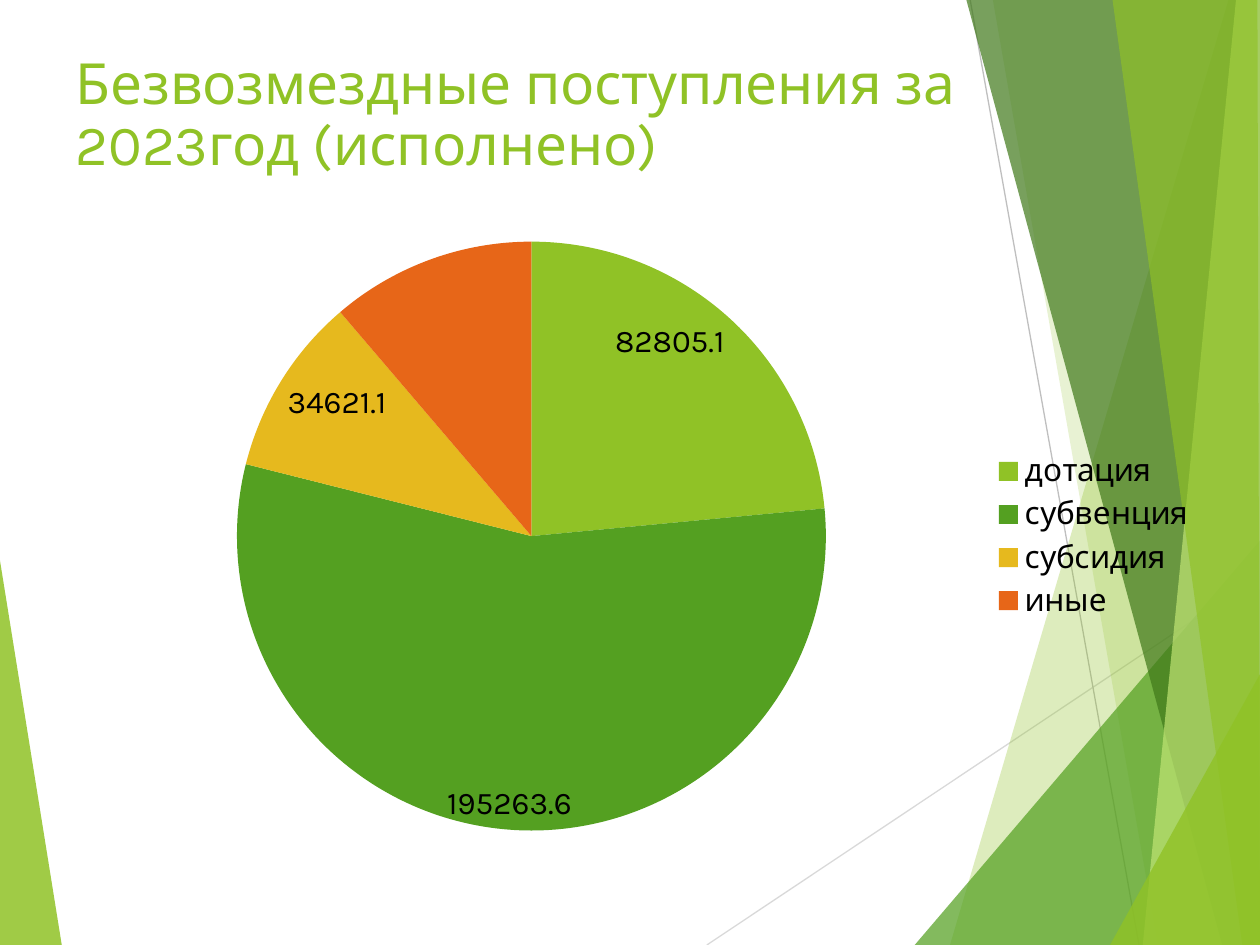
from pptx import Presentation
from pptx.chart.data import CategoryChartData
from pptx.dml.color import RGBColor
from pptx.enum.chart import XL_CHART_TYPE, XL_LABEL_POSITION, XL_LEGEND_POSITION
from pptx.enum.shapes import MSO_CONNECTOR
from pptx.enum.text import MSO_ANCHOR, MSO_AUTO_SIZE, PP_ALIGN
from pptx.oxml import parse_xml
from pptx.oxml.ns import nsdecls, qn
from pptx.oxml.xmlchemy import OxmlElement
from pptx.util import Inches, Pt

PIE, STRAIGHT = XL_CHART_TYPE.PIE, MSO_CONNECTOR.STRAIGHT
LEGEND_RIGHT, INSIDE_END = XL_LEGEND_POSITION.RIGHT, XL_LABEL_POSITION.INSIDE_END
LEFT, MIDDLE, NO_FIT = PP_ALIGN.LEFT, MSO_ANCHOR.MIDDLE, MSO_AUTO_SIZE.NONE

FONT = "Karla"
BLACK = RGBColor(0x00, 0x00, 0x00)
LIME = RGBColor(0x90, 0xC2, 0x26)
GREEN = RGBColor(0x54, 0xA0, 0x21)
DARK_GREEN = RGBColor(0x3F, 0x78, 0x19)
PALE_LIME = RGBColor(0xC0, 0xE4, 0x74)
YELLOW = RGBColor(0xE6, 0xB9, 0x1E)
ORANGE = RGBColor(0xE7, 0x66, 0x18)
LIGHT_GREY = RGBColor(0xD9, 0xD9, 0xD9)
GREY = RGBColor(0xBF, 0xBF, 0xBF)


class Deck:
    def __init__(self, width, height):
        self.prs = Presentation()
        self.prs.slide_width, self.prs.slide_height = Inches(width), Inches(height)
        self.s = None

    def add_slide(self):
        self.s = self.prs.slides.add_slide(self.prs.slide_layouts[5])

    def facet(self, points, color, opacity):
        """Translucent polygon; opacity in percent."""
        corners = [(Inches(x), Inches(y)) for x, y in points]
        fb = self.s.shapes.build_freeform(*corners[0])
        fb.add_line_segments(corners[1:], close=True)
        sp = fb.convert_to_shape()
        sp.shadow.inherit = False
        sp.line.fill.background()
        sp.fill.solid()
        sp.fill.fore_color.rgb = color
        alpha = OxmlElement("a:alpha")
        alpha.set("val", str(opacity * 1000))
        sp.fill._xPr.find(".//" + qn("a:srgbClr")).append(alpha)

    def line(self, start, end, color):
        cx = self.s.shapes.add_connector(STRAIGHT, *map(Inches, start + end))
        cx.line.color.rgb = color
        cx.line.width = Pt(0.75)
        cx._element.spPr.append(OxmlElement("a:effectLst"))

    def title(self, text, box):
        sp = self.s.shapes.title
        sp.left, sp.top, sp.width, sp.height = map(Inches, box)
        tf = sp.text_frame
        tf.text = text
        tf.word_wrap, tf.auto_size, tf.vertical_anchor = True, NO_FIT, MIDDLE
        tf.margin_right = Inches(1)
        p = tf.paragraphs[0]
        p.alignment, p.line_spacing = LEFT, 0.9
        p.font.name, p.font.size, p.font.color.rgb = FONT, Pt(32.4), LIME
        # Keep the title in front of the decoration
        self.s.shapes._spTree.append(sp._element)

    def pie(self, slices, box, unlabelled):
        data = CategoryChartData()
        data.categories = [name for name, _, _ in slices]
        data.add_series("Series 1", [value for _, value, _ in slices])
        chart = self.s.shapes.add_chart(PIE, *map(Inches, box), data).chart
        chart.has_title = False
        chart.font.name, chart.font.size, chart.font.color.rgb = FONT, Pt(18), BLACK
        chart.has_legend = True
        chart.legend.position = LEGEND_RIGHT
        chart.legend.include_in_layout = False

        chart.plots[0].vary_by_categories = True
        series = chart.plots[0].series[0]
        for i, (_, _, color) in enumerate(slices):
            fmt = series.points[i].format
            fmt.fill.solid()
            fmt.fill.fore_color.rgb = color
            fmt.line.fill.background()

        labels = series.data_labels
        labels.show_value = True
        labels.position = INSIDE_END
        series._element.find(qn("c:dLbls")).insert(0, parse_xml(
            f'<c:dLbl {nsdecls("c")}><c:idx val="{unlabelled}"/>'
            '<c:delete val="1"/></c:dLbl>'))


def main():
    deck = Deck(10, 7.5)
    deck.add_slide()

    # Decoration: left wedge, thin lines, right-hand facets
    deck.facet([(0, 4.45), (0.49, 7.5), (0, 7.5)], LIME, 85)
    deck.line((5.61, 7.5), (10, 4.57), LIGHT_GREY)
    deck.line((7.7, 0), (9.04, 7.5), GREY)
    facets = [
        ([(9.75, 0), (7.54, 7.5), (10, 7.5), (10, 0)], LIME, 30),
        ([(7.88, 0), (9.19, 7.5), (10, 7.5), (10, 0)], LIME, 20),
        ([(7.26, 7.5), (10, 4.29), (10, 7.5)], GREEN, 72),
        ([(7.67, 0), (9.7, 7.5), (10, 7.5), (10, 0)], DARK_GREEN, 70),
        ([(9.81, 0), (9.07, 7.5), (10, 7.5), (10, 0)], PALE_LIME, 70),
        ([(8.83, 0), (9.86, 7.5), (10, 7.5), (9.98, 0)], LIME, 65),
        ([(8.81, 7.5), (10, 5.35), (10, 7.5)], LIME, 80),
    ]
    for points, color, opacity in facets:
        deck.facet(points, color, opacity)

    # Title
    deck.title("Безвозмездные поступления за 2023год (исполнено)",
               (0.5, 0.3, 9, 1.25))

    # Pie of receipts
    slices = [
        ("дотация", 82805.1, LIME),
        ("субвенция", 195263.6, GREEN),
        ("субсидия", 34621.1, YELLOW),
        ("иные", 39618.2, ORANGE),
    ]
    deck.pie(slices, (0.59, 1.78, 9, 4.95), unlabelled=3)

    deck.prs.save("out.pptx")


if __name__ == "__main__":
    main()
